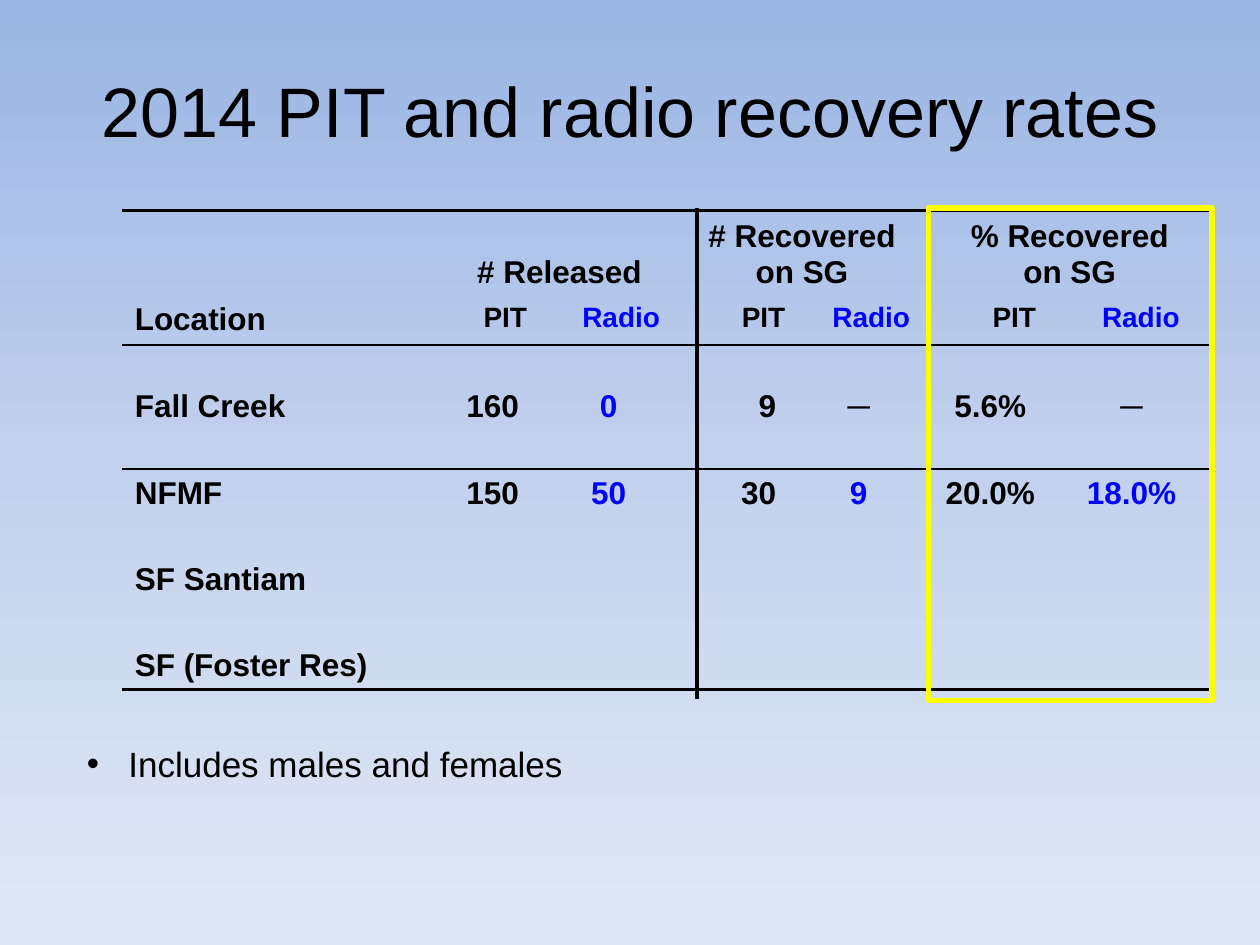
from copy import deepcopy
from lxml import etree
from pptx import Presentation
from pptx.dml.color import RGBColor
from pptx.enum.shapes import MSO_CONNECTOR, MSO_SHAPE
from pptx.enum.text import MSO_ANCHOR, PP_ALIGN
from pptx.oxml.ns import qn
from pptx.util import Inches, Pt

LEFT, MID, RIGHT = PP_ALIGN.LEFT, PP_ALIGN.CENTER, PP_ALIGN.RIGHT
TOP, CENTER, BOTTOM = MSO_ANCHOR.TOP, MSO_ANCHOR.MIDDLE, MSO_ANCHOR.BOTTOM
HEX = {"ink": "000000", "radio": "0000FF", "frame": "FFFF00",
       "sky": "9AB5E4", "haze": "C2D1ED", "mist": "E1E8F5"}
NO_GRID = "{2D5ABB26-0587-4C30-8999-92F81FD0307C}"


def style(para, size, tone="ink", bold=False, align=LEFT):
    para.alignment = align
    for run in para.runs:
        run.font.name, run.font.size, run.font.bold = "Arial", Pt(size), bold
        run.font.color.rgb = RGBColor.from_string(HEX[tone])


def rule(cell, side, width):
    line = etree.SubElement(cell._tc.get_or_add_tcPr(), qn("a:ln" + side), w=str(Pt(width)))
    fill = etree.SubElement(line, qn("a:solidFill"))
    etree.SubElement(fill, qn("a:srgbClr"), val=HEX["ink"])


deck = Presentation()
deck.slide_width, deck.slide_height = Inches(10), Inches(7.5)
slide = deck.slides.add_slide(deck.slide_layouts[6])

# Background gradient with three stops
fill = slide.background.fill
fill.gradient()
fill.gradient_angle = 270
stops = slide.element.find(".//" + qn("a:gsLst"))
stops.insert(1, deepcopy(stops[0]))
for stop, spot, tone in zip(fill.gradient_stops, (0, 0.5, 1), ("sky", "haze", "mist")):
    stop.position = spot
    stop.color.rgb = RGBColor.from_string(HEX[tone])

# Line between recovered counts and rates, line after released counts
for x, y in ((7.37, 1.67), (5.53, 1.65)):
    line = slide.shapes.add_connector(MSO_CONNECTOR.STRAIGHT, Inches(x), Inches(y),
                                      Inches(x), Inches(y + 3.9))
    line.line.width = Pt(2)
    line.line.color.rgb = RGBColor.from_string(HEX["ink"])
    etree.SubElement(line._element.spPr, qn("a:effectLst"))

# Recovery table
rows = [
    ["", "# Released", "", "# Recovered\non SG", "", "% Recovered\non SG", ""],
    ["Location"] + ["PIT", "Radio"] * 3,
    ["Fall Creek", "160", "0", "9", "─", "5.6%", "─"],
    ["NFMF", "150", "50", "30", "9", "20.0%", "18.0%"],
    ["SF Santiam"] + [""] * 6,
    ["SF (Foster Res)"] + [""] * 6,
]
widths = [2.55, 0.98, 0.86, 1.1, 0.91, 1.13, 1.11]
heights = [0.68, 0.39, 0.98, 0.39, 0.68, 0.68]
anchors = [BOTTOM, TOP, CENTER, CENTER, BOTTOM, BOTTOM]
rules = {0: ("T", 1.5), 1: ("B", 1), 2: ("B", 1.5), 5: ("B", 2)}
pads = {3: 0.4, 5: 0.33}  # left margins that shift the PIT headings

frame = slide.shapes.add_table(6, 7, Inches(0.97), Inches(1.67),
                               Inches(sum(widths)), Inches(sum(heights)))
table = frame.table
table.first_row = table.horz_banding = False
frame._element.find(".//" + qn("a:tableStyleId")).text = NO_GRID
for col, width in zip(table.columns, widths):
    col.width = Inches(width)
for row, height in zip(table.rows, heights):
    row.height = Inches(height)
for c in (1, 3, 5):
    table.cell(0, c).merge(table.cell(0, c + 1))

for r, words in enumerate(rows):
    for c, text in enumerate(words):
        cell = table.cell(r, c)
        if r in rules:
            rule(cell, *rules[r])
        cell.fill.background()
        cell.vertical_anchor = anchors[r]
        if r == 1 and c in pads:
            cell.margin_left = Inches(pads[c])
        if r in (2, 3) and c:
            cell.margin_right = Inches(0.3 if c < 5 else 0.25)
        if not text:
            continue
        cell.text_frame.text = text
        blue = r and c in (2, 4, 6) and text != "─"
        align = LEFT if c == 0 else RIGHT if c == 3 and r > 1 else MID
        for para in cell.text_frame.paragraphs:
            style(para, 16 if r == 1 and c else 18, "radio" if blue else "ink", True, align)

# Title
title = slide.shapes.add_textbox(0, Inches(0.49), Inches(10), Inches(0.77)).text_frame
title.word_wrap = True
title.text = "2014 PIT and radio recovery rates"
style(title.paragraphs[0], 40, align=MID)

# Frame around the rates
box = slide.shapes.add_shape(MSO_SHAPE.RECTANGLE, Inches(7.37), Inches(1.65),
                             Inches(2.25), Inches(3.91))
box.shadow.inherit = False
box.fill.background()
box.line.width = Pt(3)
box.line.color.rgb = RGBColor.from_string(HEX["frame"])

# Bulleted note
note = slide.shapes.add_textbox(Inches(-0.15), Inches(5.84), Inches(4.85), Inches(0.44)).text_frame
note.word_wrap = True
note.text = "Includes males and females"
para = note.paragraphs[0]
props = para._p.get_or_add_pPr()
props.set("marL", str(Inches(1.07)))
props.set("indent", str(Inches(-0.33)))
etree.SubElement(props, qn("a:buFont"), typeface="Arial")
etree.SubElement(props, qn("a:buChar"), char="•")
style(para, 20)

deck.save("out.pptx")
